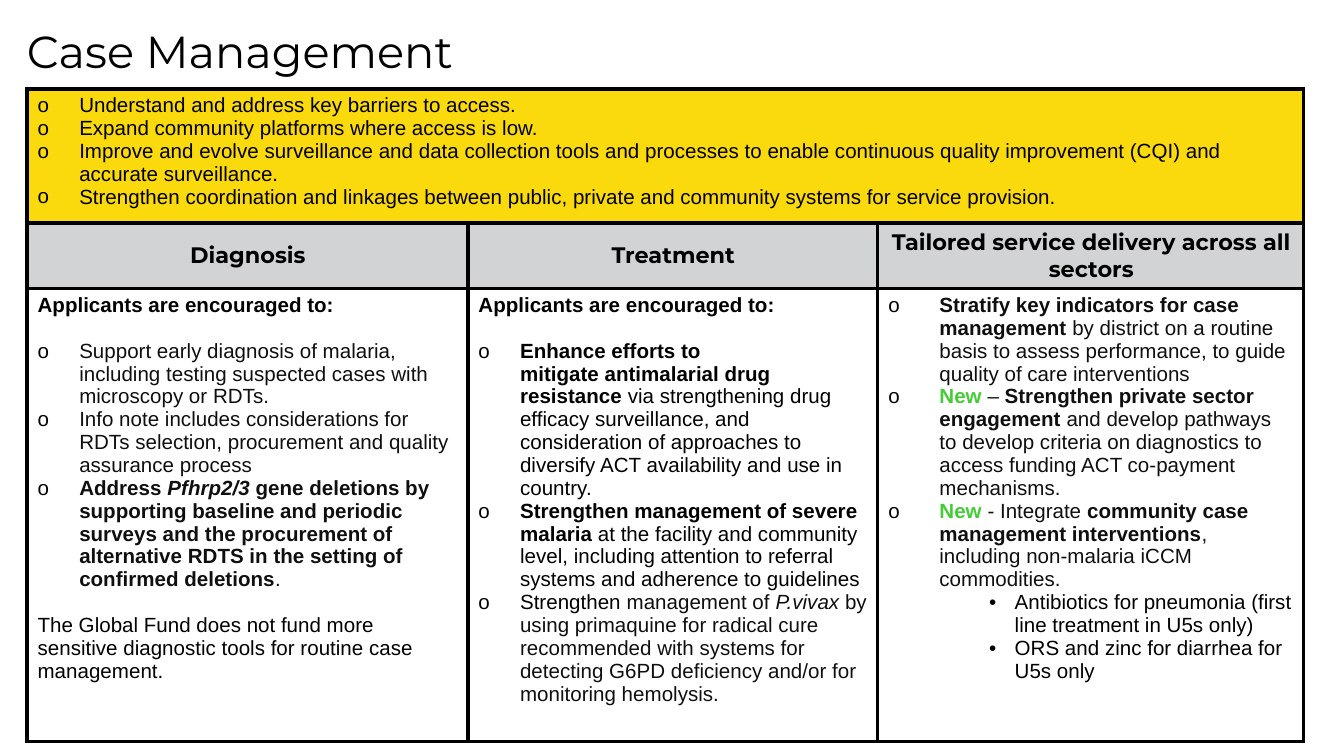
from lxml.etree import SubElement
from pptx import Presentation
from pptx.dml.color import RGBColor as RGB
from pptx.enum.text import MSO_ANCHOR as ANCHOR, PP_ALIGN as ALIGN
from pptx.oxml.ns import qn
from pptx.util import Inches, Pt

COLORS = {
    "black": "000000",
    "dark": "0F0F0F",
    "green": "44CC36",
    "yellow": "FAD90D",
    "gray": "D1D3D4",
    "white": "FFFFFF",
}
COLS = [3.28, 3.05, 3.17]
ROWS = [0.99, 0.49, 3.35]
LINE = 12.3
TIE, NBSP = "~", chr(160)

GOALS = [
    "Understand and address key barriers to access.",
    "Expand community platforms where access is low.",
    "Improve and evolve surveillance and data collection tools and processes~to enable "
    "continuous quality improvement (CQI) and accurate surveillance.",
    "Strengthen coordination and linkages between public, private and community systems "
    "for service provision.",
]
HEADERS = ["Diagnosis", "Treatment", "Tailored service delivery across all sectors"]
INTRO = [("Applicants are encouraged to:", "b")]
DIAGNOSIS = [
    [("Support early diagnosis of malaria, including testing suspected cases with "
      "microscopy or RDTs.", "")],
    [("Info note includes considerations for RDTs selection, procurement and quality "
      "assurance process", "")],
    [("Address ", "b"), ("Pfhrp2/3", "bi"),
     (" gene deletions by supporting baseline and periodic surveys and the "
      "procurement~of alternative RDTS in the setting of confirmed deletions", "b"),
     (".", "")],
]
FUNDING = [("The Global Fund~does not~fund more sensitive diagnostic tools for routine "
            "case management.", "")]
TREATMENT = [
    [("Enhance efforts to mitigate~antimalarial drug resistance ", "b"),
     ("via strengthening drug efficacy surveillance, and consideration of approaches to "
      "diversify ACT availability and use in country.", "")],
    [("Strengthen management of severe malaria", "b"),
     ("~at the facility~and community level, including~attention to referral systems "
      "and adherence to guidelines", "")],
    [("Strengthen ", ""), ("management of ", "d"), ("P.vivax ", "di"),
     ("by using primaquine for radical cure recommended with systems for detecting G6PD "
      "deficiency and/or~for monitoring hemolysis.~", "d")],
]
DELIVERY = [
    [("Stratify key indicators for case management ", "b"),
     ("by district on a routine basis to assess performance, to guide quality of care "
      "interventions", "")],
    [("New ", "bg"), ("– ", ""), ("Strengthen private sector engagement ", "b"),
     ("and develop pathways to develop criteria on diagnostics to access funding ACT "
      "co-payment mechanisms.", "")],
    [("New ", "bg"), ("- Integrate ", ""),
     ("community case management interventions", "b"),
     (", including non-malaria~iCCM commodities.~", "")],
]
COMMODITIES = [
    "Antibiotics for pneumonia (first line treatment in U5s only)",
    "ORS and zinc for diarrhea for U5s only",
]


class Deck:
    """Holds the style and the current slide, and draws each kind of element."""

    def __init__(self, prs):
        self.s = prs.slides.add_slide(prs.slide_layouts[6])
        self.head, self.body = "Montserrat", "Arial"

    def font(self, p, name, size, color="black"):
        p.font.name, p.font.size = name, Pt(size)
        p.font.color.rgb = RGB.from_string(COLORS[color])

    def title(self, text):
        box = self.s.shapes.add_textbox(Inches(0.2), Inches(0.22), Inches(9.21), Inches(0.32))
        tf = box.text_frame
        tf.word_wrap = True
        tf.margin_left = tf.margin_right = tf.margin_top = tf.margin_bottom = 0
        p = tf.paragraphs[0]
        p.text, p.line_spacing = text, 0.9
        self.font(p, self.head, 24)

    def table(self):
        rows, cols = len(ROWS), len(COLS)
        frame = self.s.shapes.add_table(rows, cols, Inches(0.2), Inches(0.66),
                                        Inches(sum(COLS)), Inches(sum(ROWS)))
        tbl = frame.table
        tbl.first_row = tbl.horz_banding = False
        for col, width in zip(tbl.columns, COLS):
            col.width = Inches(width)
        for row, height, fill in zip(tbl.rows, ROWS, ["yellow", "gray", "white"]):
            row.height = Inches(height)
            for cell in row.cells:
                self.cell(cell, fill)
        tbl.cell(0, 0).merge(tbl.cell(0, cols - 1))
        return tbl

    def cell(self, cell, fill):
        cell.margin_left, cell.margin_right = Inches(0.08), Inches(0.07)
        cell.margin_top = cell.margin_bottom = Inches(0.04)
        cell.fill.solid()
        cell.fill.fore_color.rgb = RGB.from_string(COLORS[fill])
        tc_pr = cell._tc.get_or_add_tcPr()
        for i, side in enumerate("LRTB"):
            ln = SubElement(tc_pr, qn("a:ln" + side), w=str(Pt(2.25)))
            solid = SubElement(ln, qn("a:solidFill"))
            SubElement(solid, qn("a:srgbClr"), val=COLORS["black"])
            tc_pr.insert(i, ln)

    def header(self, cell, text):
        cell.vertical_anchor = ANCHOR.MIDDLE
        p = cell.text_frame.paragraphs[0]
        p.text, p.alignment = text, ALIGN.CENTER
        self.font(p, self.head, 12)
        p.font.bold = True

    def para(self, cell, runs, bullet="", left=0.31, hang=0.31, color="black", gap=0, level=0):
        tf = cell.text_frame
        p = tf.paragraphs[0] if not tf.text else tf.add_paragraph()
        p.level = level
        if gap:
            p.space_before = Pt(gap)
        if bullet:
            p_pr = p._p.get_or_add_pPr()
            p_pr.set("marL", str(Inches(left)))
            p_pr.set("indent", str(-Inches(hang)))
            bu_clr = SubElement(p_pr, qn("a:buClr"))
            SubElement(bu_clr, qn("a:srgbClr"), val=COLORS["black"])
            SubElement(p_pr, qn("a:buFont"), typeface=self.body)
            SubElement(p_pr, qn("a:buChar"), char=bullet)
        self.font(p, self.body, 11, color)
        for text, style in runs:
            r = p.add_run()
            r.text = text.replace(TIE, NBSP)
            r.font.bold, r.font.italic = "b" in style, "i" in style
            for key, name in (("d", "dark"), ("g", "green")):
                if key in style:
                    r.font.color.rgb = RGB.from_string(COLORS[name])


def main():
    prs = Presentation()
    prs.slide_width, prs.slide_height = Inches(10), Inches(10 * 9 / 16)
    deck = Deck(prs)
    deck.title("Case Management")
    tbl = deck.table()

    for text in GOALS:
        deck.para(tbl.cell(0, 0), [(text, "")], "o")
    for i, text in enumerate(HEADERS):
        deck.header(tbl.cell(1, i), text)

    diagnosis, treatment, delivery = (tbl.cell(2, i) for i in range(3))
    for cell, items, color in ((diagnosis, DIAGNOSIS, "dark"), (treatment, TREATMENT, "black")):
        deck.para(cell, INTRO)
        for i, runs in enumerate(items):
            deck.para(cell, runs, "o", color=color, gap=0 if i else LINE)
    deck.para(diagnosis, FUNDING, gap=LINE)

    for runs in DELIVERY:
        deck.para(delivery, runs, "o", 0.38, 0.38, "dark")
    for text in COMMODITIES:
        deck.para(delivery, [(text, "")], "•", 0.94, 0.19, level=2)
    prs.save("out.pptx")


if __name__ == "__main__":
    main()
